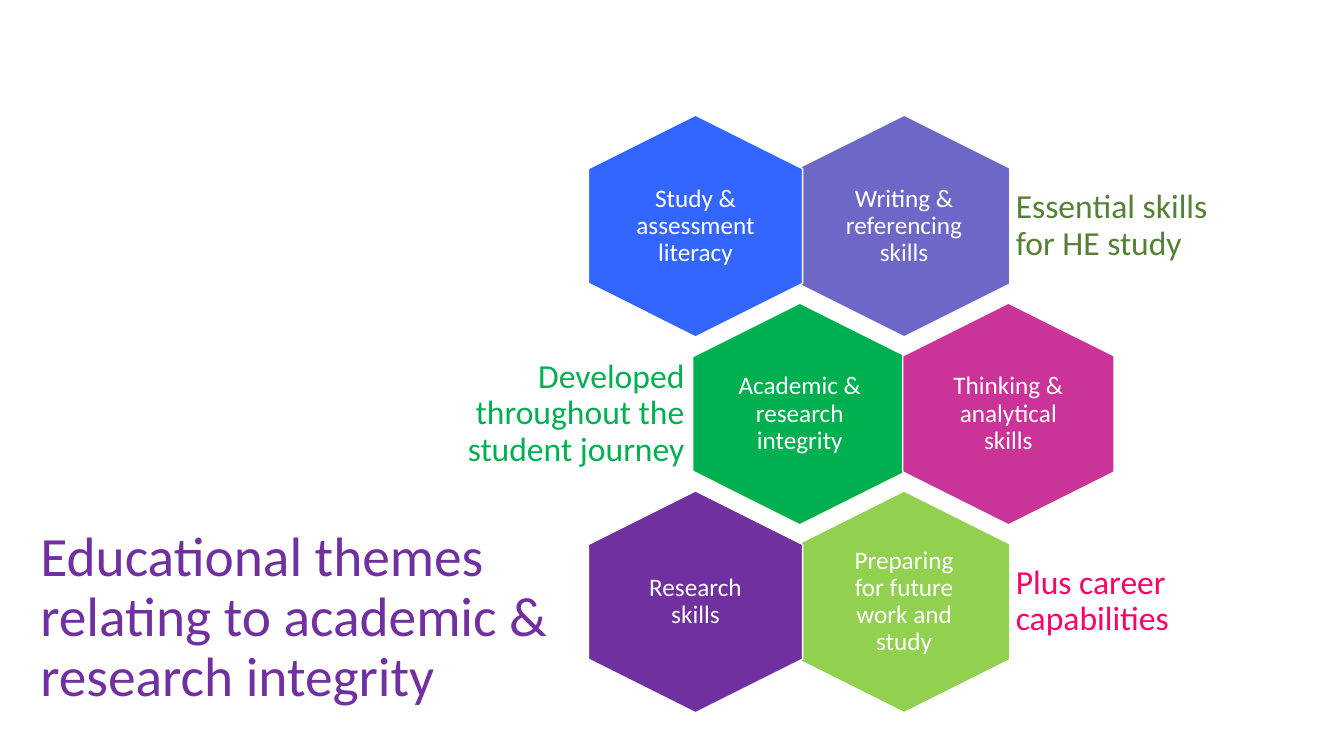
from pptx import Presentation
from pptx.dml.color import RGBColor
from pptx.enum.shapes import MSO_SHAPE as Preset
from pptx.enum.text import MSO_ANCHOR as Anchor, MSO_AUTO_SIZE as AutoSize, PP_ALIGN as Align
from pptx.util import Pt

# Content
COLORS = {
    "white": "FFFFFF", "purple": "7030A0", "violet": "6D68C8", "blue": "3366FF",
    "green": "00B050", "magenta": "CC3399", "lime": "92D050",
    "olive": "548135", "pink": "FF0066",
}
TITLE = "Educational themes relating to academic & research integrity"
# Each theme: column, label, color, width; listed from back to front
ROWS = [
    {"themes": [(1, "Writing & referencing skills", "violet", 151),
                (0, "Study & assessment literacy", "blue", 153)],
     "caption": ("Essential skills for HE study", "olive")},
    {"themes": [(0, "Academic & research integrity", "green", 153),
                (1, "Thinking & analytical skills", "magenta", 151)],
     "caption": ("Developed throughout the student journey", "green")},
    {"themes": [(1, "Preparing for future work and study", "lime", 151),
                (0, "Research skills", "purple", 153)],
     "caption": ("Plus career capabilities", "pink")},
]

# Honeycomb geometry in points
FIRST_X, FIRST_Y = 496.8, 161.5
COLUMN_STEP, ROW_STEP = 149, 134.2
HEX_HEIGHT = 158.4
LABEL_WIDTH, LABEL_HEIGHT = 102, 106.5
CAPTION_WIDTH, CAPTION_HEIGHT = 176.4, 95
CAPTION_LEFT, CAPTION_RIGHT = 718.5, 496


def color(name):
    return RGBColor.from_string(COLORS[name])


def write(holder, text, *, size, fill, align=Align.LEFT, inset_x=7.2, inset_y=7.2):
    frame = holder.text_frame
    frame.word_wrap = True
    frame.auto_size = AutoSize.NONE
    frame.vertical_anchor = Anchor.MIDDLE
    frame.margin_left = frame.margin_right = Pt(inset_x)
    frame.margin_top = frame.margin_bottom = Pt(inset_y)
    paragraph = frame.paragraphs[0]
    paragraph.text = text
    paragraph.alignment = align
    paragraph.line_spacing = 0.9
    paragraph.space_before = Pt(0)
    font = paragraph.font
    font.name, font.size = "Calibri", Pt(size)
    font.color.rgb = color(fill)


def centered(x, y, width, height):
    return Pt(x - width / 2), Pt(y - height / 2), Pt(width), Pt(height)


def add_theme(slide, x, y, label, fill, width):
    # A quarter turn makes the hexagon stand on its point
    hexagon = slide.shapes.add_shape(Preset.HEXAGON, *centered(x, y, HEX_HEIGHT, width))
    hexagon.rotation = 90
    hexagon.adjustments[0] = 0.25
    hexagon.shadow.inherit = False
    hexagon.fill.solid()
    hexagon.fill.fore_color.rgb = color(fill)
    hexagon.line.color.rgb = color("white")
    hexagon.line.width = Pt(1)
    label_box = slide.shapes.add_textbox(*centered(x, y, LABEL_WIDTH, LABEL_HEIGHT))
    write(label_box, label, size=18, fill="white", align=Align.CENTER,
          inset_x=5, inset_y=5)


def main():
    deck = Presentation()
    deck.slide_width, deck.slide_height = Pt(960), Pt(540)
    slide = deck.slides.add_slide(deck.slide_layouts[5])

    # Title
    title = slide.shapes.title
    title.left, title.top, title.width, title.height = Pt(21.6), Pt(389.5), Pt(430.5), Pt(105)
    write(title, TITLE, size=39.6, fill="purple", inset_y=3.6)

    # Honeycomb rows, odd ones shifted by half a column, with captions beside them
    for row_number, row in enumerate(ROWS):
        shifted = row_number % 2
        y = FIRST_Y + row_number * ROW_STEP
        for column, label, fill, width in row["themes"]:
            x = FIRST_X + (column + shifted / 2) * COLUMN_STEP
            add_theme(slide, x, y, label, fill, width)
        caption, fill = row["caption"]
        left = CAPTION_RIGHT - CAPTION_WIDTH if shifted else CAPTION_LEFT
        caption_box = slide.shapes.add_textbox(
            Pt(left), Pt(y - CAPTION_HEIGHT / 2), Pt(CAPTION_WIDTH), Pt(CAPTION_HEIGHT))
        write(caption_box, caption, size=24, fill=fill,
              align=Align.RIGHT if shifted else Align.LEFT)

    deck.save("out.pptx")


if __name__ == "__main__":
    main()
